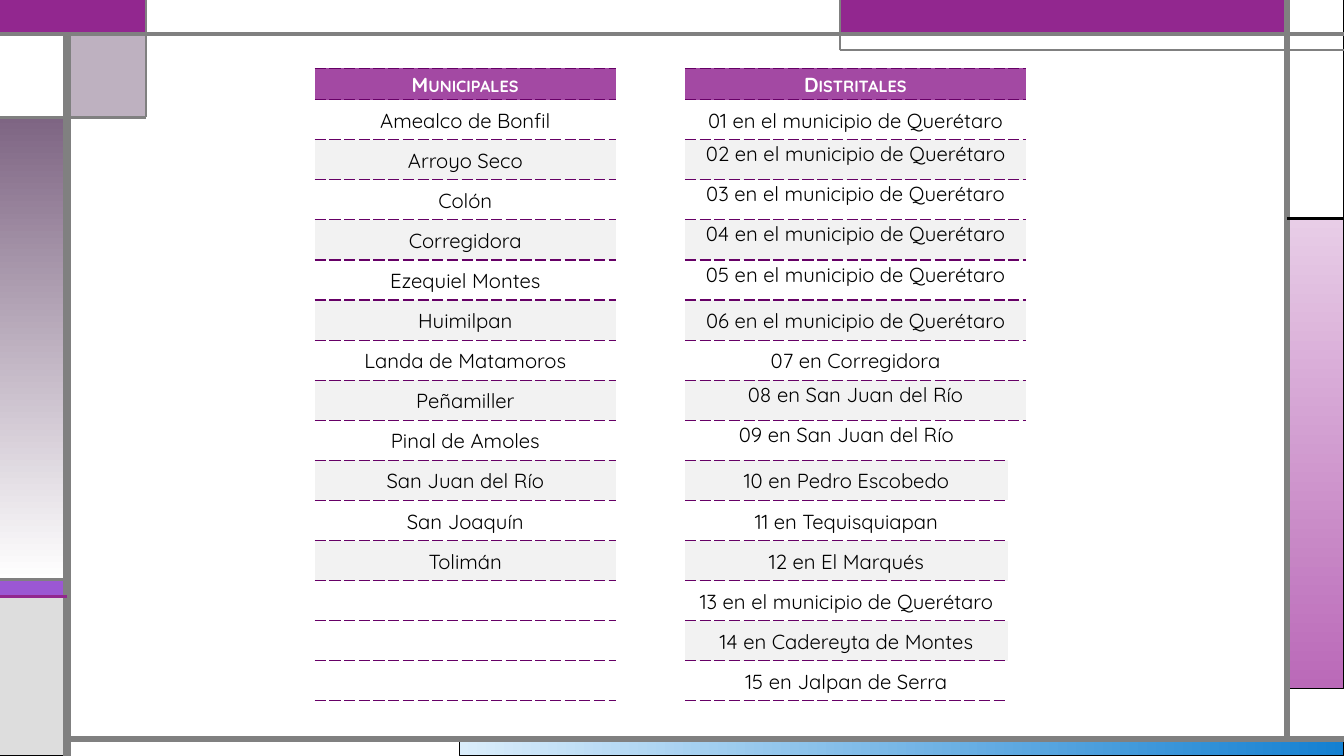
from dataclasses import dataclass
from typing import Optional

import lxml.etree
import pptx
import pptx.dml.color
import pptx.enum.shapes
import pptx.enum.text
import pptx.oxml.ns
import pptx.util

Cm = pptx.util.Cm
Pt = pptx.util.Pt
qn = pptx.oxml.ns.qn


@dataclass(frozen=True)
class Theme:
    font: str = "Quicksand"
    text_size: float = 14.5
    white: str = "FFFFFF"
    black: str = "000000"
    gray: str = "808080"
    pale_gray: str = "DDDDDD"
    purple: str = "92278F"
    violet: str = "9B57D3"
    indigo: str = "755DD9"
    mauve: str = "7E6583"
    header: str = "A349A3"
    band: str = "F2F2F2"
    rule: str = "660066"
    plain_style: str = "{2D5ABB26-0587-4C30-8999-92F81FD0307C}"


THEME = Theme()


@dataclass(frozen=True)
class Panel:
    left: float
    top: float
    right: float
    bottom: float
    color: str
    end_color: Optional[str] = None  # second gradient colour
    angle: int = 270
    opacity: int = 100
    line: str = THEME.black
    weight: float = 0.75


@dataclass(frozen=True)
class Bar:
    x1: float
    y1: float
    x2: float
    y2: float
    weight: float
    color: str = THEME.gray


# Frame grid, in centimetres
WIDTH, HEIGHT = 33.87, 19.05
LEFT, CORNER, TAB, RIGHT = 1.69, 3.67, 21.17, 32.44
TOP, SHELF, NOTCH, SIDE, STRIPE, FOOT, BASE = 0.85, 1.27, 2.96, 5.5, 14.61, 15.03, 18.63

PANELS = [
    Panel(11.57, BASE, WIDTH, HEIGHT, "DAEDFB", "1480D1", angle=0),
    Panel(RIGHT, SIDE, WIDTH, 17.36, "E8CDE7", "BA69B8"),
    Panel(0, STRIPE, LEFT, FOOT, THEME.violet),
    Panel(0, FOOT, LEFT, HEIGHT, THEME.pale_gray),
    Panel(RIGHT, 0, WIDTH, SIDE, THEME.white),
    Panel(TAB, 0, RIGHT, TOP, THEME.purple, line=THEME.indigo),
    Panel(LEFT, TOP, CORNER, NOTCH, THEME.mauve, opacity=50),
    Panel(0, NOTCH, LEFT, STRIPE, THEME.mauve, THEME.white),
    Panel(0, TOP, LEFT, NOTCH, THEME.white),
    Panel(0, 0, CORNER, TOP, THEME.purple, line=THEME.purple, weight=1.5),
    Panel(CORNER, 0, TAB, TOP, THEME.white, line=THEME.gray),
]

BARS = [
    Bar(LEFT, HEIGHT, LEFT, TOP, 6),
    Bar(LEFT, BASE, WIDTH, BASE, 4.5),
    Bar(RIGHT, BASE, RIGHT, 0, 4.5),
    Bar(0, TOP, WIDTH, TOP, 3),
    Bar(WIDTH, SHELF, TAB, SHELF, 1.5),
    Bar(TAB, SHELF, TAB, 0, 1.5),
    Bar(RIGHT, SIDE, WIDTH, SIDE, 2.25, THEME.black),
    Bar(CORNER, 0, CORNER, NOTCH, 1.5),
    Bar(CORNER, NOTCH, 0, NOTCH, 2.25),
    Bar(LEFT, STRIPE, 0, STRIPE, 2.25),
    Bar(LEFT, FOOT, 0, FOOT, 2.25, THEME.purple),
]

MUNICIPALES = [
    "Municipales", "Amealco de Bonfil", "Arroyo Seco", "Colón", "Corregidora",
    "Ezequiel Montes", "Huimilpan", "Landa de Matamoros", "Peñamiller",
    "Pinal de Amoles", "San Juan del Río", "San Joaquín", "Tolimán", "", "", "",
]
PLACES = ["el municipio de Querétaro"] * 6 + ["Corregidora"] + ["San Juan del Río"] * 2 + [
    "Pedro Escobedo", "Tequisquiapan", "El Marqués", "el municipio de Querétaro",
    "Cadereyta de Montes", "Jalpan de Serra",
]
DISTRITALES = ["Distritales"] + [f"{n:02d} en {place}" for n, place in enumerate(PLACES, 1)]

COLUMN_WIDTHS = [7.59, 1.74, 8.14, 0.34]
HEADER_HEIGHT, ROW_HEIGHT = 0.79, 1.01
LAST_MERGED_ROW = 8
TOP_ANCHORED_ROWS = {2, 3, 4, 5, 8, 9}


def rgb(color: str) -> pptx.dml.color.RGBColor:
    return pptx.dml.color.RGBColor.from_string(color)


def draw_panel(page, panel: Panel) -> None:
    box = page.shapes.add_shape(
        pptx.enum.shapes.MSO_SHAPE.RECTANGLE, Cm(panel.left), Cm(panel.top),
        Cm(panel.right - panel.left), Cm(panel.bottom - panel.top))
    box.shadow.inherit = False
    if panel.end_color:
        box.fill.gradient()
        box.fill.gradient_angle = panel.angle
        for stop, color in zip(box.fill.gradient_stops, (panel.color, panel.end_color)):
            stop.color.rgb = rgb(color)
    else:
        box.fill.solid()
        box.fill.fore_color.rgb = rgb(panel.color)
    if panel.opacity < 100:
        color_node = next(box.element.spPr.iter(qn("a:srgbClr")))
        lxml.etree.SubElement(color_node, qn("a:alpha"), val=str(panel.opacity * 1000))
    box.line.color.rgb = rgb(panel.line)
    box.line.width = Pt(panel.weight)


def draw_bar(page, bar: Bar) -> None:
    line = page.shapes.add_connector(
        pptx.enum.shapes.MSO_CONNECTOR.STRAIGHT,
        Cm(bar.x1), Cm(bar.y1), Cm(bar.x2), Cm(bar.y2))
    line.line.color.rgb = rgb(bar.color)
    line.line.width = Pt(bar.weight)
    lxml.etree.SubElement(line.element.spPr, qn("a:effectLst"))


def set_borders(cell, ruled: set[str]) -> None:
    properties = cell._tc.get_or_add_tcPr()
    for index, side in enumerate("LRTB"):
        border = lxml.etree.Element(qn(f"a:ln{side}"), w=str(Pt(1)))
        if side in ruled:
            paint = lxml.etree.SubElement(border, qn("a:solidFill"))
            lxml.etree.SubElement(paint, qn("a:srgbClr"), val=THEME.rule)
            lxml.etree.SubElement(border, qn("a:prstDash"), val="dash")
        else:
            lxml.etree.SubElement(border, qn("a:noFill"))
        properties.insert(index, border)


def fill_cell(cell, text: str, fill: Optional[str], ruled: set[str],
              header: bool = False, top: bool = False) -> None:
    anchor = pptx.enum.text.MSO_ANCHOR
    cell.vertical_anchor = anchor.TOP if top else anchor.MIDDLE
    cell.margin_left = cell.margin_right = Cm(0.18)
    cell.margin_top = cell.margin_bottom = 0
    if fill:
        cell.fill.solid()
        cell.fill.fore_color.rgb = rgb(fill)
    else:
        cell.fill.background()
    set_borders(cell, ruled)
    para = cell.text_frame.paragraphs[0]
    if not text:
        lxml.etree.SubElement(para._p, qn("a:endParaRPr"), sz=str(int(THEME.text_size * 100)))
        return
    para.text = text
    para.alignment = pptx.enum.text.PP_ALIGN.CENTER
    para.line_spacing = 1.07
    para.space_after = Pt(8)
    font = para.runs[0].font
    font.name = THEME.font
    font.size = Pt(THEME.text_size)
    font.bold = header
    font.color.rgb = rgb(THEME.white if header else THEME.black)
    if header:
        para.runs[0]._r.get_or_add_rPr().set("cap", "small")


def draw_table(page) -> None:
    count = len(DISTRITALES)
    frame = page.shapes.add_table(
        count, len(COLUMN_WIDTHS), Cm(7.93), Cm(1.72), Cm(sum(COLUMN_WIDTHS)),
        Cm(HEADER_HEIGHT + ROW_HEIGHT * (count - 1)))
    next(frame.element.iter(qn("a:tableStyleId"))).text = THEME.plain_style
    table = frame.table
    for column, width in zip(table.columns, COLUMN_WIDTHS):
        column.width = Cm(width)
    for index, (town, district) in enumerate(zip(MUNICIPALES, DISTRITALES)):
        header = index == 0
        merged = index <= LAST_MERGED_ROW
        table.rows[index].height = Cm(HEADER_HEIGHT if header else ROW_HEIGHT)
        fill = THEME.header if header else THEME.band if index % 2 == 0 else None
        edge = {"T", "B"} if merged else {"T"} if index == LAST_MERGED_ROW + 1 else set()
        fill_cell(table.cell(index, 0), town, fill if town else THEME.white, {"T", "B"}, header)
        fill_cell(table.cell(index, 1), "", THEME.white, set())
        fill_cell(table.cell(index, 2), district, fill, {"T", "B"}, header,
                  index in TOP_ANCHORED_ROWS)
        fill_cell(table.cell(index, 3), "", fill if merged else None, edge)
        if merged:
            table.cell(index, 2).merge(table.cell(index, 3))


def main() -> None:
    deck = pptx.Presentation()
    deck.slide_width, deck.slide_height = Cm(WIDTH), Cm(HEIGHT)
    page = deck.slides.add_slide(deck.slide_layouts[6])
    # Decorative frame
    for panel in PANELS:
        draw_panel(page, panel)
    for bar in BARS:
        draw_bar(page, bar)
    # Councils table
    draw_table(page)
    deck.save("out.pptx")


if __name__ == "__main__":
    main()
